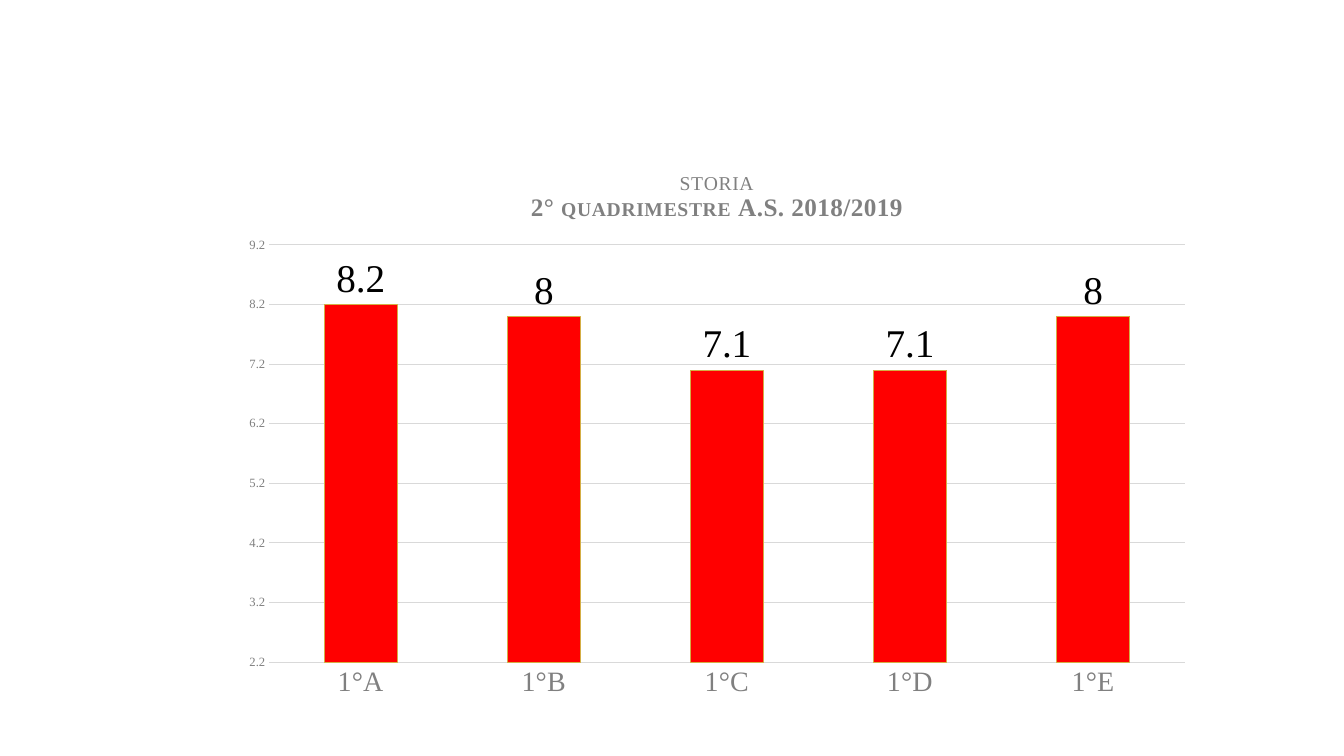
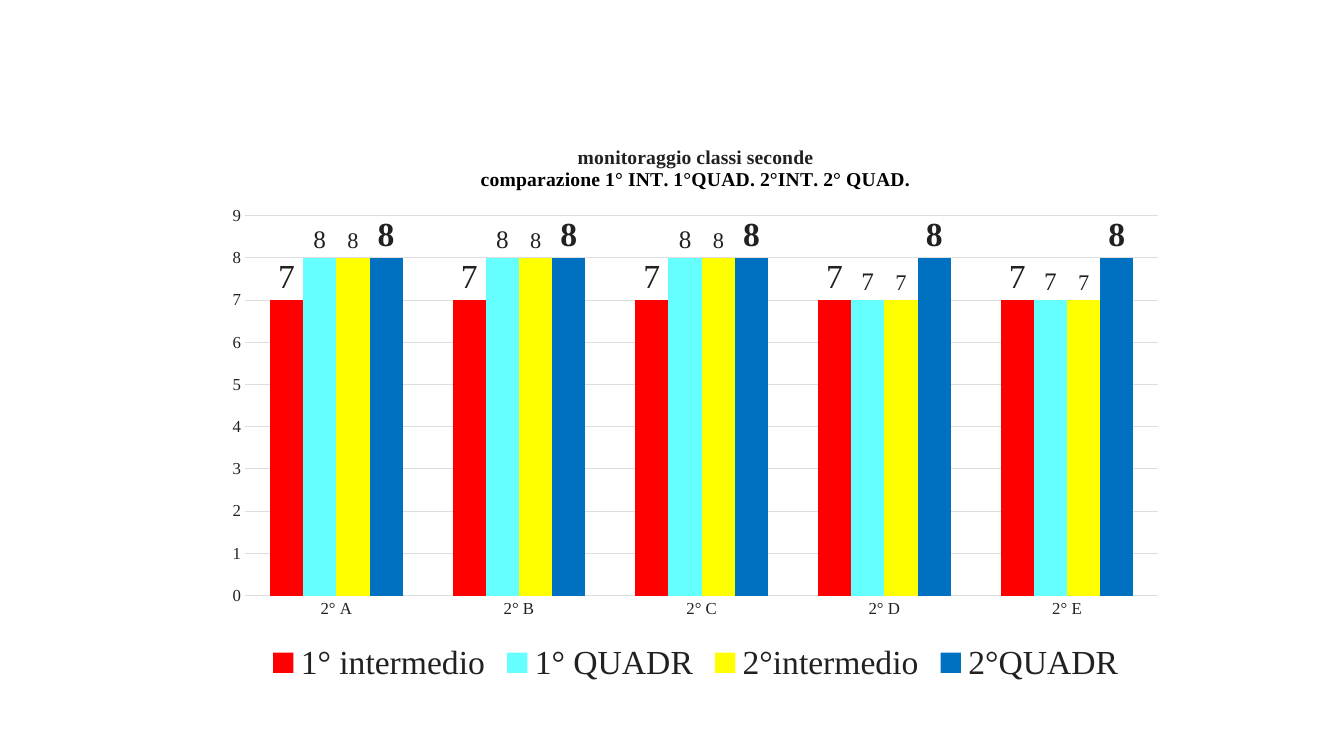
from lxml import etree
from pptx import Presentation
from pptx.chart.data import CategoryChartData
from pptx.dml.color import RGBColor
from pptx.enum import chart as ec
from pptx.oxml import ns
from pptx.util import Inches, Pt

FONT = "Times New Roman"
HEX = {"black": "000000", "ink": "212121", "gray": "808080", "red": "FF0000",
       "aqua": "66FFFF", "yellow": "FFFF00", "blue": "0070C0", "gold": "D4AE45",
       "rule": "D9D9D9", "pale": "DEDEDE"}

# Title runs: text, size, bold, colour.
# Series: name, values, fill, label size, label bold.
CHARTS = [
    {"box": (2.28, 1.5, 9.66, 5.53), "plot": (2.67, 2.43, 9.08, 4.14),
     "title": [[("STORIA", 14, False, "gray")],
               [("2° ", 18, True, "gray"), ("QUADRIMESTRE", 14, True, "gray"),
                (" A.S. 2018/2019", 18, True, "gray")]],
     "spacing": 30,
     "cats": ["1°A", "1°B", "1°C", "1°D", "1°E"],
     "series": [("Series 1", (8.2, 8, 7.1, 7.1, 8), "red", 28, False)],
     "edge": "gold", "label": "black", "axis": "gray", "grid": "rule",
     "base": None, "sizes": (20, 9), "range": (2.2, 9.2), "legend": None},
    {"box": (2.12, 1.24, 9.56, 5.59), "plot": (2.43, 2.14, 9.06, 3.77),
     "title": [[("monitoraggio classi seconde", 14, True, "ink")],
               [("comparazione 1° INT. 1°QUAD. 2°INT. 2° QUAD.", 14, True, "black")]],
     "spacing": 0,
     "cats": ["2° A", "2° B", "2° C", "2° D", "2° E"],
     "series": [("1° intermedio", (7, 7, 7, 7, 7), "red", 24, False),
                ("1° QUADR", (8, 8, 8, 7, 7), "aqua", 18, False),
                ("2°intermedio", (8, 8, 8, 7, 7), "yellow", 16, False),
                ("2°QUADR", (8, 8, 8, 8, 8), "blue", 24, True)],
     "edge": None, "label": "ink", "axis": "ink", "grid": "pale",
     "base": "pale", "sizes": (12, 12), "range": (0, 9), "legend": 24},
]


def style(font, size, color, bold=False):
    font.name, font.size, font.bold = FONT, Pt(size), bold
    font.color.rgb = RGBColor.from_string(HEX[color])


def stroke(line, color):
    if color:
        line.color.rgb = RGBColor.from_string(HEX[color])
        line.width = Pt(0.75)
    else:
        line.fill.background()


def place(chart, box, plot):
    """Fix the inner plot area, given in slide inches."""
    area = chart._chartSpace.chart.plotArea
    for old in area.findall(ns.qn("c:layout")):
        area.remove(old)
    layout = etree.Element(ns.qn("c:layout"))
    manual = etree.SubElement(layout, ns.qn("c:manualLayout"))
    left, top, wide, high = box
    x, y, w, h = plot
    marks = {"layoutTarget": "inner", "xMode": "edge", "yMode": "edge",
             "x": (x - left) / wide, "y": (y - top) / high,
             "w": w / wide, "h": h / high}
    for tag, val in marks.items():
        etree.SubElement(manual, ns.qn("c:" + tag)).set("val", str(val))
    area.insert(0, layout)


def add_title(chart, lines, gap):
    chart.has_title = True
    frame = chart.chart_title.text_frame
    for i, line in enumerate(lines):
        para = frame.add_paragraph() if i else frame.paragraphs[0]
        for words, size, bold, color in line:
            run = para.add_run()
            run.text = words
            style(run.font, size, color, bold)
            if gap:
                run._r.get_or_add_rPr().set("spc", str(gap))
    chart.chart_title.include_in_layout = False


def set_axes(chart, item):
    cat, val = chart.category_axis, chart.value_axis
    for axis, size, base in zip((cat, val), item["sizes"], (item["base"], None)):
        axis.major_tick_mark = axis.minor_tick_mark = ec.XL_TICK_MARK.NONE
        style(axis.tick_labels.font, size, item["axis"])
        stroke(axis.format.line, base)
    val.minimum_scale, val.maximum_scale = item["range"]
    val.major_unit = 1
    val.has_major_gridlines = True
    stroke(val.major_gridlines.format.line, item["grid"])


def set_bars(chart, item):
    bars = chart.plots[0]
    bars.gap_width, bars.overlap, bars.vary_by_categories = 150, 0, False
    for row, (_, _, color, size, bold) in zip(bars.series, item["series"]):
        row.format.fill.solid()
        row.format.fill.fore_color.rgb = RGBColor.from_string(HEX[color])
        stroke(row.format.line, item["edge"])
        tags = row.data_labels
        tags.show_value = True
        tags.position = ec.XL_LABEL_POSITION.OUTSIDE_END
        style(tags.font, size, item["label"], bold)


def add_chart(slide, item):
    data = CategoryChartData()
    data.categories = item["cats"]
    for name, vals, *_ in item["series"]:
        data.add_series(name, vals)
    chart = slide.shapes.add_chart(ec.XL_CHART_TYPE.COLUMN_CLUSTERED,
                                   *map(Inches, item["box"]), data).chart
    style(chart.font, 10, "black")
    add_title(chart, item["title"], item["spacing"])
    set_axes(chart, item)
    set_bars(chart, item)
    chart.has_legend = bool(item["legend"])
    if item["legend"]:
        chart.legend.position = ec.XL_LEGEND_POSITION.BOTTOM
        chart.legend.include_in_layout = False
        style(chart.legend.font, item["legend"], "ink")
    place(chart, item["box"], item["plot"])


def main():
    deck = Presentation()
    deck.slide_width, deck.slide_height = Inches(13.33), Inches(7.5)
    for item in CHARTS:
        add_chart(deck.slides.add_slide(deck.slide_layouts[6]), item)
    deck.save("out.pptx")


if __name__ == "__main__":
    main()
